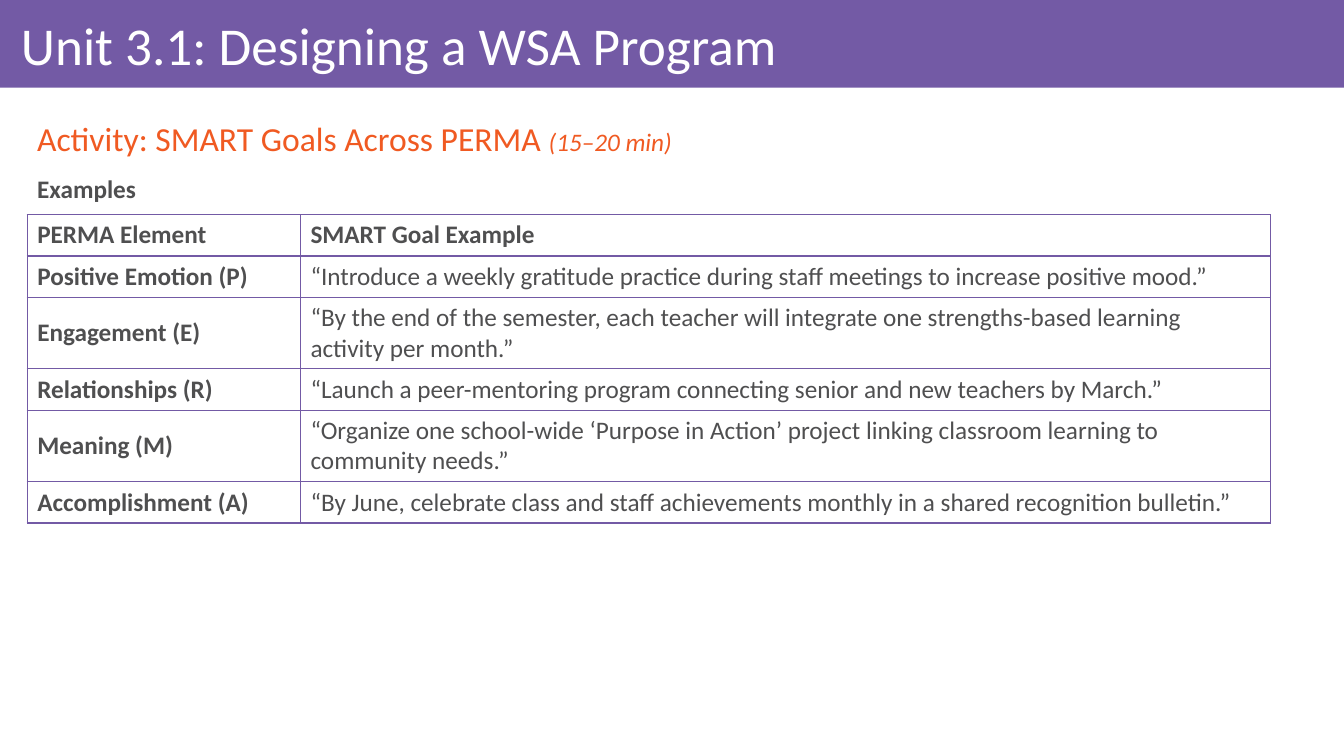
from lxml.etree import SubElement
from pptx import Presentation
from pptx.dml.color import RGBColor
from pptx.enum.shapes import MSO_SHAPE
from pptx.enum.text import MSO_ANCHOR, PP_ALIGN
from pptx.oxml.ns import qn
from pptx.util import Inches, Pt

FONT = "Calibri"
PURPLE = "735AA5"
ORANGE = "F05A22"
GREY = "4F4F50"
WHITE = "FFFFFF"

LEFT = 0.27
COLUMN_WIDTHS = (2.71, 9.62)
ONE_LINE_ROW, TWO_LINE_ROW = 0.41, 0.71
GOALS = [
    ("PERMA Element", "SMART Goal Example", ONE_LINE_ROW),
    ("Positive Emotion (P)",
     "“Introduce a weekly gratitude practice during staff meetings to increase positive mood.”",
     ONE_LINE_ROW),
    ("Engagement (E)",
     "“By the end of the semester, each teacher will integrate one strengths-based learning "
     "activity per month.”",
     TWO_LINE_ROW),
    ("Relationships (R)",
     "“Launch a peer-mentoring program connecting senior and new teachers by March.”",
     ONE_LINE_ROW),
    ("Meaning (M)",
     "“Organize one school-wide ‘Purpose in Action’ project linking classroom learning to "
     "community needs.”",
     TWO_LINE_ROW),
    ("Accomplishment (A)",
     "“By June, celebrate class and staff achievements monthly in a shared recognition bulletin.”",
     ONE_LINE_ROW),
]


def color(hex_string):
    return RGBColor.from_string(hex_string)


def format_run(run, size, hex_string, bold=False, italic=False):
    run.font.name = FONT
    run.font.size = Pt(size)
    run.font.color.rgb = color(hex_string)
    run.font.bold = bold
    run.font.italic = italic


def add_banner(slide, width, height):
    banner = slide.shapes.add_shape(MSO_SHAPE.RECTANGLE, 0, 0, width, height)
    banner.shadow.inherit = False
    banner.fill.solid()
    banner.fill.fore_color.rgb = color(PURPLE)
    banner.line.fill.background()


def add_text(slide, left, top, width, height, text, size, hex_string,
             bold=False, anchor=MSO_ANCHOR.MIDDLE, line_spacing=0.9):
    """Add a one-paragraph text box and return its paragraph."""
    text_box = slide.shapes.add_textbox(Inches(left), Inches(top), Inches(width), Inches(height))
    text_frame = text_box.text_frame
    text_frame.word_wrap = True
    text_frame.vertical_anchor = anchor
    text_frame.text = text
    paragraph = text_frame.paragraphs[0]
    paragraph.line_spacing = line_spacing
    format_run(paragraph.runs[0], size, hex_string, bold)
    return paragraph


def add_cell_borders(cell, hex_string, width):
    properties = cell._tc.get_or_add_tcPr()
    for position, side in enumerate(("lnL", "lnR", "lnT", "lnB")):
        line = SubElement(properties, qn(f"a:{side}"), w=str(Pt(width)))
        fill = SubElement(line, qn("a:solidFill"))
        SubElement(fill, qn("a:srgbClr"), val=hex_string)
        properties.insert(position, line)


def fill_cell(cell, text, bold):
    cell.text = text
    cell.vertical_anchor = MSO_ANCHOR.MIDDLE
    cell.fill.background()
    add_cell_borders(cell, PURPLE, 1)
    format_run(cell.text_frame.paragraphs[0].runs[0], 18, GREY, bold)


def add_goals_table(slide, top):
    height = sum(row_height for _, _, row_height in GOALS)
    frame = slide.shapes.add_table(len(GOALS), len(COLUMN_WIDTHS), Inches(LEFT), Inches(top),
                                   Inches(sum(COLUMN_WIDTHS)), Inches(height))
    table = frame.table
    table.first_row = False
    table.horz_banding = False
    for column, width in zip(table.columns, COLUMN_WIDTHS):
        column.width = Inches(width)
    for index, (element, goal, row_height) in enumerate(GOALS):
        table.rows[index].height = Inches(row_height)
        fill_cell(table.cell(index, 0), element, bold=True)
        fill_cell(table.cell(index, 1), goal, bold=index == 0)


def main():
    presentation = Presentation()
    presentation.slide_width = Inches(13.33)
    presentation.slide_height = Inches(7.5)
    slide = presentation.slides.add_slide(presentation.slide_layouts[6])

    add_banner(slide, presentation.slide_width, Inches(0.87))
    add_text(slide, 0.11, 0.09, 13.06, 0.78, "Unit 3.1: Designing a WSA Program", 38, WHITE)

    activity = add_text(slide, LEFT, 1.1, 13.06, 0.6,
                        "Activity: SMART Goals Across PERMA ", 24, ORANGE)
    activity.alignment = PP_ALIGN.JUSTIFY
    duration = activity.add_run()
    duration.text = "(15–20 min)"
    format_run(duration, 18, ORANGE, italic=True)

    add_goals_table(slide, 2.13)
    add_text(slide, LEFT, 1.67, 6.73, 0.4, "Examples", 18, GREY, bold=True,
             anchor=MSO_ANCHOR.TOP, line_spacing=1.0)

    presentation.save("out.pptx")


if __name__ == "__main__":
    main()
